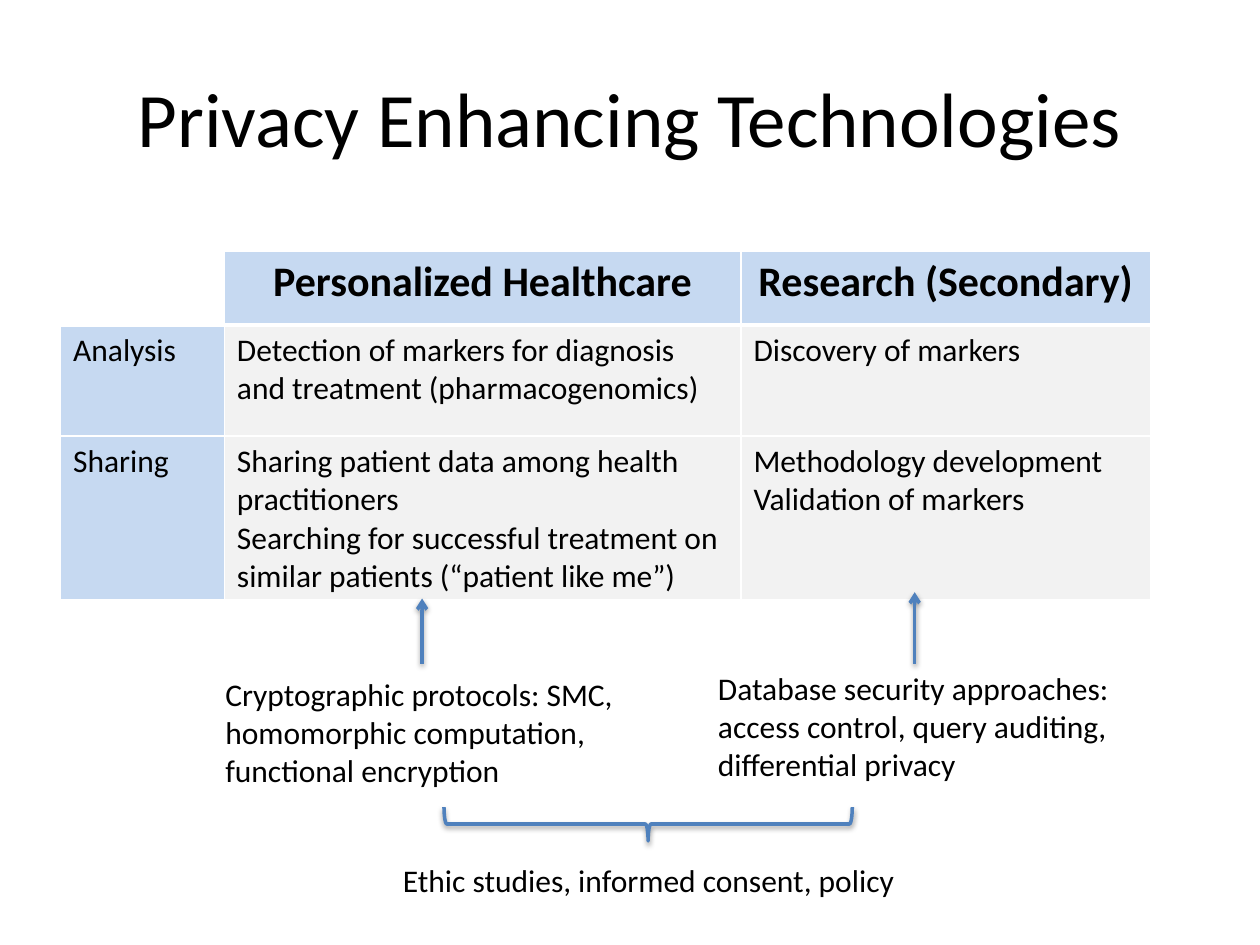
from lxml import etree
from pptx import Presentation
from pptx.dml.color import RGBColor
from pptx.enum.shapes import MSO_CONNECTOR, MSO_SHAPE
from pptx.enum.text import MSO_ANCHOR, MSO_AUTO_SIZE, PP_ALIGN
from pptx.oxml import parse_xml
from pptx.oxml.ns import nsdecls, qn
from pptx.util import Pt

STRAIGHT = MSO_CONNECTOR.STRAIGHT
LEFT_BRACE = MSO_SHAPE.LEFT_BRACE
MIDDLE = MSO_ANCHOR.MIDDLE
GROW = MSO_AUTO_SIZE.SHAPE_TO_FIT_TEXT
LEFT, CENTER = PP_ALIGN.LEFT, PP_ALIGN.CENTER

BLACK = RGBColor(0x00, 0x00, 0x00)
BLUE = RGBColor(0x4F, 0x81, 0xBD)
PALE_BLUE = RGBColor(0xC6, 0xD9, 0xF1)
PALE_GRAY = RGBColor(0xF2, 0xF2, 0xF2)
FONT = "Calibri"


def write_lines(text_frame, lines, size, alignment=LEFT, bold=False):
    for index, line in enumerate(lines):
        paragraph = text_frame.paragraphs[0] if index == 0 else text_frame.add_paragraph()
        paragraph.alignment = alignment
        run = paragraph.add_run()
        run.text = line
        run.font.name = FONT
        run.font.size = Pt(size)
        run.font.bold = bold
        run.font.color.rgb = BLACK


def style_outline(shape):
    """Give a blue line and a soft shadow that falls straight down."""
    shape.line.color.rgb = BLUE
    shape.line.width = Pt(2)
    properties = shape.line._get_or_add_ln().getparent()
    for effects in properties.findall(qn("a:effectLst")):
        properties.remove(effects)
    properties.append(parse_xml(
        f'<a:effectLst {nsdecls("a")}>'
        f'<a:outerShdw blurRad="{Pt(3.1)}" dist="{Pt(1.6)}" dir="5400000" rotWithShape="0">'
        '<a:srgbClr val="000000"><a:alpha val="38000"/></a:srgbClr>'
        '</a:outerShdw></a:effectLst>'))


presentation = Presentation()
presentation.slide_width = Pt(720)
presentation.slide_height = Pt(540)
slide = presentation.slides.add_slide(presentation.slide_layouts[6])

# Title
title = slide.shapes.add_textbox(Pt(36), Pt(21.6), Pt(648), Pt(90)).text_frame
title.word_wrap = True
title.vertical_anchor = MIDDLE
write_lines(title, ["Privacy Enhancing Technologies"], 44, CENTER)

# Table of uses
rows = [
    [[], ["Personalized Healthcare"], ["Research (Secondary)"]],
    [["Analysis"],
     ["Detection of markers for diagnosis and treatment (pharmacogenomics)"],
     ["Discovery of markers"]],
    [["Sharing"],
     ["Sharing patient data among health practitioners",
      "Searching for successful treatment on similar patients (“patient like me”)"],
     ["Methodology development", "Validation of markers"]],
]
column_widths = [93.6, 295.2, 234]
row_heights = [42.5, 63.4, 75.6]
table = slide.shapes.add_table(
    len(rows), len(column_widths), Pt(34.6), Pt(143.3),
    Pt(sum(column_widths)), Pt(sum(row_heights))).table
for column, width in zip(table.columns, column_widths):
    column.width = Pt(width)
for row, height in zip(table.rows, row_heights):
    row.height = Pt(height)

for row_index, row_lines in enumerate(rows):
    is_header = row_index == 0
    for column_index, lines in enumerate(row_lines):
        cell = table.cell(row_index, column_index)
        cell_properties = cell._tc.get_or_add_tcPr()
        for side in ("lnL", "lnR", "lnT", "lnB"):
            heavy = (is_header and side == "lnB") or (row_index == 1 and side == "lnT")
            border = etree.SubElement(cell_properties, qn(f"a:{side}"), w=str(Pt(3 if heavy else 1)))
            fill = etree.SubElement(border, qn("a:solidFill"))
            etree.SubElement(fill, qn("a:srgbClr"), val="FFFFFF")
        if not lines:
            cell.fill.background()
            continue
        cell.fill.solid()
        cell.fill.fore_color.rgb = PALE_BLUE if is_header or column_index == 0 else PALE_GRAY
        if is_header:
            write_lines(cell.text_frame, lines, 24, CENTER, bold=True)
        else:
            write_lines(cell.text_frame, lines, 18)

# Arrows up to the table
for x, tip in [(241.2, 342), (522.7, 338.4)]:
    arrow = slide.shapes.add_connector(STRAIGHT, Pt(x), Pt(379.4), Pt(x), Pt(tip))
    style_outline(arrow)
    etree.SubElement(arrow.line._get_or_add_ln(), qn("a:tailEnd"), type="arrow")

# Brace that joins both approaches
brace = slide.shapes.add_shape(LEFT_BRACE, Pt(360.7), Pt(354.2), Pt(19.4), Pt(233.3))
brace.rotation = 270
brace.fill.background()
style_outline(brace)

# Technologies and policy
notes = [
    (121.7, 382.3, 239.8, 72.7, ["Cryptographic protocols: SMC,",
                                 "homomorphic computation,",
                                 "functional encryption"]),
    (403.2, 378.7, 240.5, 72.7, ["Database security approaches:",
                                 "access control, query auditing,",
                                 "differential privacy"]),
    (223.2, 488.2, 299.5, 28.8, ["Ethic studies, informed consent, policy"]),
]
for left, top, width, height, lines in notes:
    text_frame = slide.shapes.add_textbox(Pt(left), Pt(top), Pt(width), Pt(height)).text_frame
    text_frame.word_wrap = False
    text_frame.auto_size = GROW
    write_lines(text_frame, lines, 18)

presentation.save("out.pptx")
